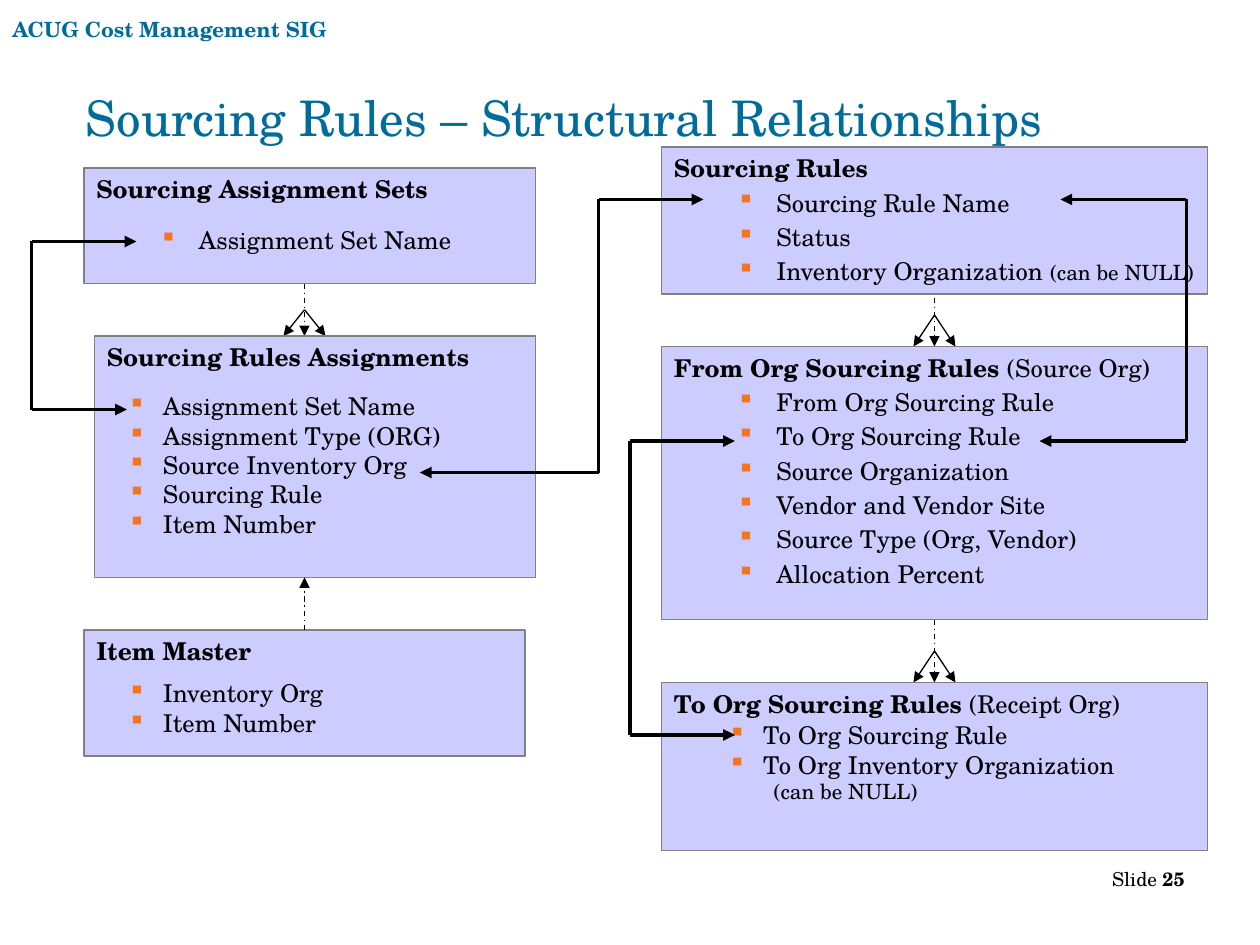
from pptx import Presentation
from pptx.dml.color import RGBColor
from pptx.enum.dml import MSO_LINE
from pptx.enum.shapes import MSO_CONNECTOR, MSO_SHAPE
from pptx.enum.text import MSO_ANCHOR, PP_ALIGN
from pptx.oxml.ns import qn
from pptx.util import Pt
from lxml import etree

RECT = MSO_SHAPE.RECTANGLE
STRAIGHT = MSO_CONNECTOR.STRAIGHT
DASH_DOT = MSO_LINE.DASH_DOT
TOP, MIDDLE = MSO_ANCHOR.TOP, MSO_ANCHOR.MIDDLE
LEFT, RIGHT = PP_ALIGN.LEFT, PP_ALIGN.RIGHT

FONT = "TeX Gyre Schola"
BLACK = RGBColor(0x00, 0x00, 0x00)
TEAL = RGBColor(0x00, 0x6C, 0x9C)
LILAC = RGBColor(0xCC, 0xCC, 0xFF)
GREY = RGBColor(0x80, 0x80, 0x80)
ORANGE = RGBColor(0xF4, 0x74, 0x21)

HEAD = {"size": Pt(14), "bold": True}
BODY = {"size": Pt(14), "bold": False}
SMALL = {"size": Pt(12), "bold": False}
GAP = 2.8

BOXES = [
    ((378, 198, 312, 156), [("From Org Sourcing Rules ", HEAD), ("(Source Org)", BODY)], GAP,
     ["From Org Sourcing Rule", "To Org Sourcing Rule", "Source Organization",
      "Vendor and Vendor Site", "Source Type (Org, Vendor)", "Allocation Percent"]),
    ((54, 192, 252, 138), [("Sourcing Rules Assignments", HEAD)], GAP, []),
    ((378, 84, 312, 84), [("Sourcing Rules", HEAD)], GAP,
     ["Sourcing Rule Name", "Status", ("Inventory Organization ", "(can be NULL)")]),
    ((378, 390, 312, 96), [("To Org Sourcing Rules", HEAD), (" (Receipt Org)", BODY)], GAP, []),
    ((48, 96, 258, 66), [("Sourcing Assignment Sets", HEAD)], 12.4, ["Assignment Set Name"]),
    ((48, 360, 252, 72), [("Item Master", HEAD)], GAP, []),
]
LISTS = [
    ((66, 220, 246, 92), 20, ["Assignment Set Name", "Assignment Type (ORG)",
                              "Source Inventory Org", "Sourcing Rule", "Item Number"]),
    ((66, 384, 246, 41), 20, ["Inventory Org", "Item Number"]),
    ((390, 408, 300, 55), 39, ["To Org Sourcing Rule", "To Org Inventory Organization"]),
]
RECEIPT_NOTE = "(can be NULL)"
LABELS = [
    ((0, 6, 264, 22), TOP, LEFT,
     [("ACUG Cost Management SIG", {"size": Pt(12), "bold": True, "color": TEAL})]),
    ((42, 42, 666, 50), MIDDLE, LEFT,
     [("Sourcing Rules – Structural Relationships", {"size": Pt(28), "color": TEAL})]),
    ((516, 492, 168, 37), TOP, RIGHT,
     [("Slide ", {"size": Pt(11)}), ("25", {"size": Pt(11), "bold": True})]),
]
FANS = [(534, 354, 390), (174, 162, 192), (534, 162, 198)]
LINKS = [
    (342, [(270, 240), (114, 402)]),
    (360, [(252, 420), (420, 420)]),
    (678, [(114, 606), (252, 594)]),
    (18, [(138, 78), (234, 72.5)]),
]


def add_line(shapes, start, end, width=0.75, dash=None, arrow=True):
    cx = shapes.add_connector(STRAIGHT, *map(Pt, start + end))
    cx.line.color.rgb = BLACK
    cx.line.width = Pt(width)
    if dash:
        cx.line.dash_style = dash
    if arrow:
        etree.SubElement(cx.line._get_or_add_ln(), qn("a:tailEnd"), type="triangle")
    etree.SubElement(cx._element.spPr, qn("a:effectLst"))


def add_runs(p, runs):
    for text, fmt in runs:
        r = p.add_run()
        r.text = text
        r.font.name = FONT
        r.font.color.rgb = BLACK
        for key, value in fmt.items():
            if key == "color":
                r.font.color.rgb = value
            else:
                setattr(r.font, key, value)


def set_indent(p, margin, hang):
    pPr = p._p.get_or_add_pPr()
    pPr.set("marL", str(Pt(margin)))
    pPr.set("indent", str(-Pt(hang)))
    return pPr


def set_bullet(p, margin, hang):
    pPr = set_indent(p, margin, hang)
    color = etree.SubElement(pPr, qn("a:buClr"))
    etree.SubElement(color, qn("a:srgbClr"), val=str(ORANGE))
    etree.SubElement(pPr, qn("a:buChar"), char="▪")


def add_text_box(shapes, place, anchor=TOP):
    tf = shapes.add_textbox(*map(Pt, place)).text_frame
    tf.word_wrap = True
    tf.vertical_anchor = anchor
    return tf


def add_box(shapes, place, heading, gap, items):
    sp = shapes.add_shape(RECT, *map(Pt, place))
    sp.shadow.inherit = False
    sp.fill.solid()
    sp.fill.fore_color.rgb = LILAC
    sp.line.color.rgb = GREY
    sp.line.width = Pt(0.75)
    tf = sp.text_frame
    tf.word_wrap = True
    tf.vertical_anchor = TOP
    tf.margin_right = 0
    p = tf.paragraphs[0]
    p.alignment = LEFT
    set_indent(p, 27, 27)
    add_runs(p, heading)
    for item in items:
        p = tf.add_paragraph()
        p.level = 1
        p.alignment = LEFT
        p.space_before = Pt(gap)
        set_bullet(p, 58.5, 22.5)
        parts = (item,) if isinstance(item, str) else item
        add_runs(p, zip(parts, (BODY, SMALL)))


def add_list(shapes, place, margin, items):
    tf = add_text_box(shapes, place)
    for i, item in enumerate(items):
        p = tf.add_paragraph() if i else tf.paragraphs[0]
        set_bullet(p, margin, 20)
        add_runs(p, [(item, BODY)])
    return tf


def main():
    prs = Presentation()
    prs.slide_width, prs.slide_height = Pt(720), Pt(540)
    shapes = prs.slides.add_slide(prs.slide_layouts[6]).shapes

    for place, anchor, align, runs in LABELS:
        p = add_text_box(shapes, place, anchor).paragraphs[0]
        p.alignment = align
        add_runs(p, runs)

    for x, top, bottom in FANS:
        fan = shapes.add_group_shape().shapes
        add_line(fan, (x, top), (x, bottom), dash=DASH_DOT)
        for dx in (-12, 12):
            add_line(fan, (x, (top + bottom) / 2), (x + dx, bottom))

    for box in BOXES:
        add_box(shapes, *box)
    for entry in LISTS:
        tf = add_list(shapes, *entry)
    p = tf.add_paragraph()
    set_indent(p, 45, 0)
    add_runs(p, [(RECEIPT_NOTE, SMALL)])

    for spine, ends in LINKS:
        (y1, _), (y2, _) = ends
        add_line(shapes, (spine, y1), (spine, y2), 2.25, arrow=False)
        for y, tip in ends:
            add_line(shapes, (spine, y), (tip, y), 2.25)
    add_line(shapes, (174, 360), (174, 330), dash=DASH_DOT)

    prs.save("out.pptx")


if __name__ == "__main__":
    main()
